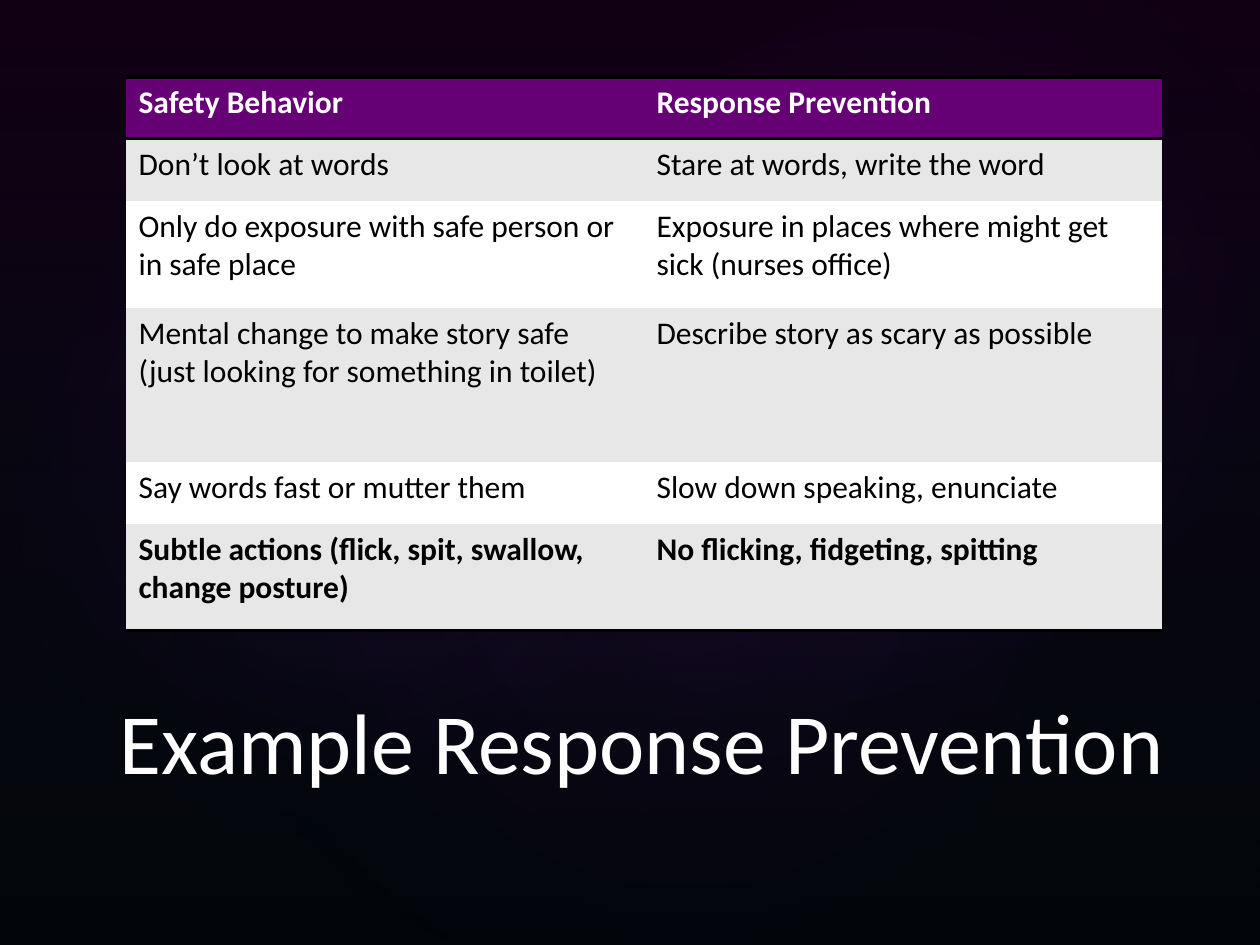
from lxml import etree
from pptx import Presentation
from pptx import util as u
from pptx.dml.color import RGBColor
from pptx.enum import shapes, text
from pptx.oxml import parse_xml
from pptx.oxml.ns import nsdecls, qn

PX_PER_INCH = 126
COLOURS = {
    "black": "000000", "white": "FFFFFF", "grey": "E7E7E7", "header": "660075",
    "plum": "33003A", "navy": "1B3861", "magenta": "E113FF",
}
NO_TABLE_STYLE = "{2D5ABB26-0587-4C30-8999-92F81FD0307C}"
LINEAR = '<a:lin ang="5400000" scaled="0"/>'
RADIAL = ('<a:path path="circle"><a:fillToRect l="50000" t="50000" '
          'r="50000" b="50000"/></a:path>')

# left, top, width, height, rotation, opacity at the centre
GLOWS = [
    (189, 144, 998, 786, 328.7, 7),
    (-38, 161, 764, 617, 294.3, 8),
    (451, 16, 893, 655, 328.7, 8),
]
ROW_HEIGHTS = [62, 62, 107, 154, 62, 107]
ROWS = [
    ("Safety Behavior", "Response Prevention"),
    ("Don’t look at words", "Stare at words, write the word"),
    ("Only do exposure with safe person or in safe place",
     "Exposure in places where might get sick (nurses office)"),
    ("Mental change to make story safe (just looking for something in toilet)",
     "Describe story as scary as possible"),
    ("Say words fast or mutter them", "Slow down speaking, enunciate"),
    ("Subtle actions (flick, spit, swallow, change posture)",
     "No flicking, fidgeting, spitting"),
]


def px(length):
    return u.Emu(round(length * u.Inches(1) / PX_PER_INCH))


def colour(name):
    return RGBColor.from_string(COLOURS[name])


def apply_format(target, values):
    for name, value in values.items():
        setattr(target, name, value)


def format_font(font, size, colour_name, bold=False):
    apply_format(font, {"name": "Calibri", "size": u.Pt(size), "bold": bold})
    font.color.rgb = colour(colour_name)


def add_gradient_shape(slide, kind, box, stops, direction, rotation=0):
    """Stops are (position %, colour name, opacity %)."""
    shape = slide.shapes.add_shape(kind, *map(px, box))
    shape.rotation = rotation
    shape.shadow.inherit = False
    shape.line.fill.background()
    shape.fill.background()
    stop_xml = "".join(
        f'<a:gs pos="{position * 1000}"><a:srgbClr val="{COLOURS[name]}">'
        f'<a:alpha val="{opacity * 1000}"/></a:srgbClr></a:gs>'
        for position, name, opacity in stops)
    gradient = parse_xml(f'<a:gradFill {nsdecls("a")} rotWithShape="1">'
                         f'<a:gsLst>{stop_xml}</a:gsLst>{direction}</a:gradFill>')
    properties = shape._element.spPr
    properties.replace(properties.find(qn("a:noFill")), gradient)


def add_backdrop(slide):
    slide.background.fill.solid()
    slide.background.fill.fore_color.rgb = colour("black")
    add_gradient_shape(slide, shapes.MSO_SHAPE.RECTANGLE, (0, 0, 1260, 945),
                       [(0, "plum", 36), (100, "navy", 10)], LINEAR)
    for *box, rotation, opacity in GLOWS:
        add_gradient_shape(slide, shapes.MSO_SHAPE.OVAL, box,
                           [(0, "magenta", opacity), (58, "navy", 0)],
                           RADIAL, rotation)


def add_borders(cell, sides):
    """Put black 2 pt lines, in schema order, ahead of the cell's fill."""
    properties = cell._tc.get_or_add_tcPr()
    for index, side in enumerate(sides):
        line = etree.Element(qn(f"a:ln{side}"), w=str(u.Pt(2)))
        fill = etree.SubElement(line, qn("a:solidFill"))
        etree.SubElement(fill, qn("a:srgbClr"), val=COLOURS["black"])
        properties.insert(index, line)


def add_behavior_table(slide):
    frame = slide.shapes.add_table(len(ROWS), 2, px(126), px(77),
                                   px(1036), px(sum(ROW_HEIGHTS)))
    table = frame.table
    apply_format(table, {"first_row": False, "horz_banding": False})
    table._tbl.tblPr.find(qn("a:tableStyleId")).text = NO_TABLE_STYLE
    last = len(ROWS) - 1
    for row_index, (height, contents) in enumerate(zip(ROW_HEIGHTS, ROWS)):
        table.rows[row_index].height = px(height)
        header = row_index == 0
        fill_name = "header" if header else ("white", "grey")[row_index % 2]
        borders = {0: "TB", last: "B"}.get(row_index, "")
        for column_index, content in enumerate(contents):
            cell = table.cell(row_index, column_index)
            cell.text = content
            cell.fill.solid()
            cell.fill.fore_color.rgb = colour(fill_name)
            format_font(cell.text_frame.paragraphs[0].runs[0].font, 18,
                        "white" if header else "black",
                        bold=row_index in (0, last))
            add_borders(cell, borders)


def place_title(slide, content):
    title = slide.shapes.title
    apply_format(title, dict(zip(("left", "top", "width", "height"),
                                 map(px, (107, 672, 1106, 126)))))
    title.text = content
    apply_format(title.text_frame, {
        "word_wrap": True,
        "auto_size": text.MSO_AUTO_SIZE.NONE,
        "vertical_anchor": text.MSO_ANCHOR.BOTTOM,
    })
    paragraph = title.text_frame.paragraphs[0]
    paragraph.alignment = text.PP_ALIGN.LEFT
    format_font(paragraph.runs[0].font, 49, "white")
    slide.shapes._spTree.append(title._element)  # bring to front


def main():
    presentation = Presentation()
    apply_format(presentation, {"slide_width": px(1260), "slide_height": px(945)})
    slide = presentation.slides.add_slide(presentation.slide_layouts[5])
    add_backdrop(slide)
    add_behavior_table(slide)
    place_title(slide, "Example Response Prevention")
    presentation.save("out.pptx")


if __name__ == "__main__":
    main()
